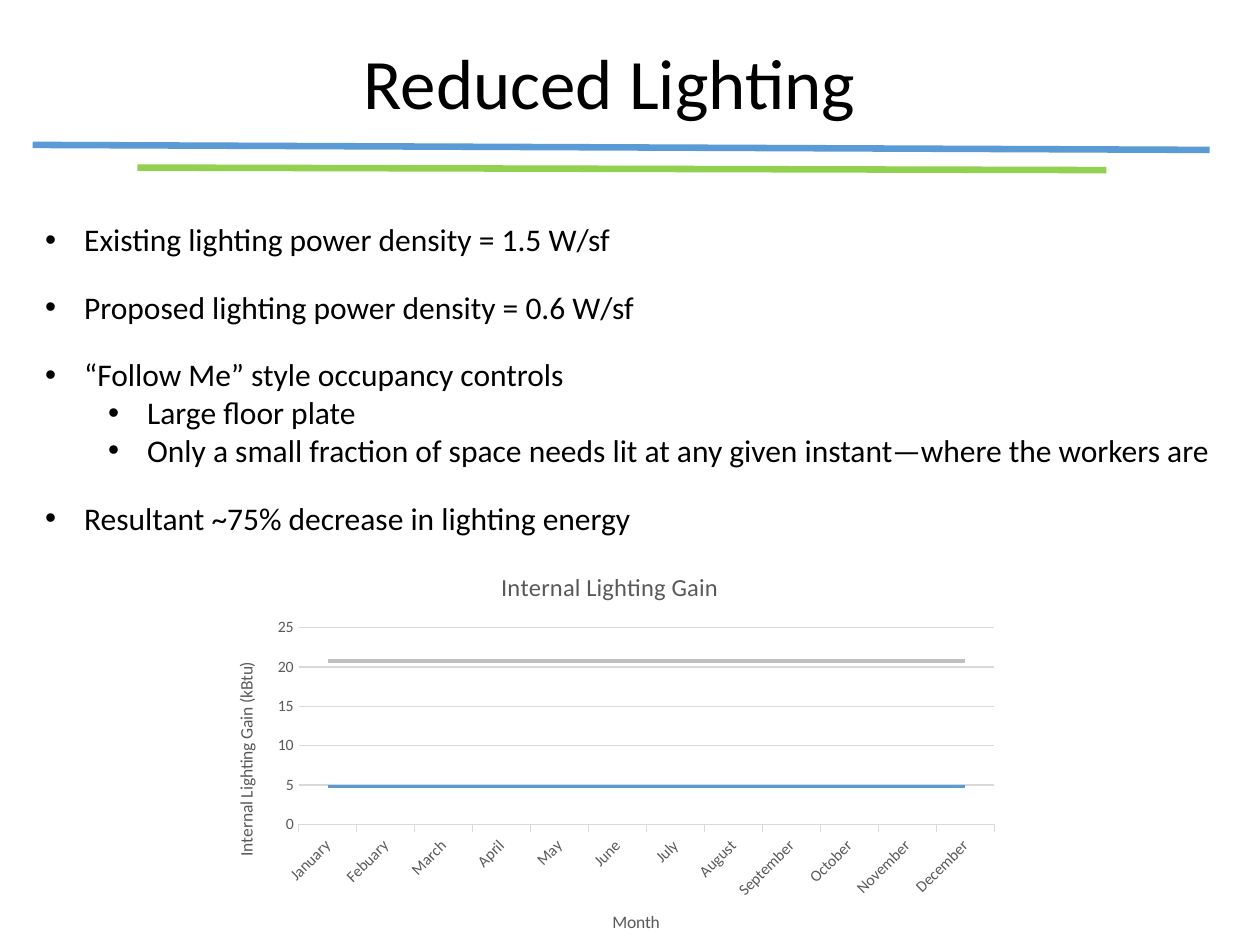
"""Build the Reduced Lighting slide with its bullets and monthly gain chart."""
from lxml.etree import SubElement
from pptx import Presentation
from pptx.chart.data import CategoryChartData
from pptx.dml.color import RGBColor
from pptx.enum.chart import XL_CHART_TYPE as ChartType, XL_TICK_LABEL_POSITION as LabelPosition
from pptx.enum.chart import XL_TICK_MARK as TickMark
from pptx.enum.shapes import MSO_CONNECTOR as Connector
from pptx.enum.text import MSO_ANCHOR as Anchor, PP_ALIGN as Align
from pptx.oxml.ns import qn
from pptx.util import Inches, Pt

BLACK = RGBColor(0x00, 0x00, 0x00)
BLUE = RGBColor(0x5B, 0x9B, 0xD5)
GREEN = RGBColor(0x92, 0xD0, 0x50)
SILVER = RGBColor(0xBF, 0xBF, 0xBF)
GRID = RGBColor(0xD9, 0xD9, 0xD9)
GRAY = RGBColor(0x59, 0x59, 0x59)


def style_font(font, size, color):
    font.name = "Calibri"
    font.size = Pt(size)
    font.bold = False
    font.color.rgb = color


def set_title(owner, text, size):
    text_frame = owner.text_frame
    text_frame.text = text
    style_font(text_frame.paragraphs[0].runs[0].font, size, GRAY)


presentation = Presentation()
presentation.slide_width = Inches(10)
presentation.slide_height = Inches(7.5)
slide = presentation.slides.add_slide(presentation.slide_layouts[6])

title_box = slide.shapes.add_textbox(Inches(1.33), Inches(0.02), Inches(7.02), Inches(1.02))
title_frame = title_box.text_frame
title_frame.word_wrap = True
title_frame.vertical_anchor = Anchor.BOTTOM
title_frame.text = "Reduced Lighting"
title = title_frame.paragraphs[0]
title.alignment = Align.CENTER
title.line_spacing = 0.9
style_font(title.runs[0].font, 40.5, BLACK)

for x1, y1, x2, y2, color in [(0.26, 1.15, 9.6, 1.19, BLUE), (1.09, 1.33, 8.78, 1.35, GREEN)]:
    rule = slide.shapes.add_connector(
        Connector.STRAIGHT, Inches(x1), Inches(y1), Inches(x2), Inches(y2))
    rule.line.color.rgb = color
    rule.line.width = Pt(3.75)
    SubElement(rule._element.spPr, qn("a:effectLst"))

bullets = [
    (0, "Existing lighting power density = 1.5 W/sf"),
    (0, "Proposed lighting power density = 0.6 W/sf"),
    (0, "“Follow Me” style occupancy controls"),
    (1, "Large floor plate"),
    (1, "Only a small fraction of space needs lit at any given instant—where the workers are"),
    (0, "Resultant ~75% decrease in lighting energy"),
]
bullet_box = slide.shapes.add_textbox(Inches(0.26), Inches(1.7), Inches(9.56), Inches(3))
bullet_frame = bullet_box.text_frame
bullet_frame.word_wrap = True
bullet_frame.text = "\n".join(text for level, text in bullets)
for index, (paragraph, (level, text)) in enumerate(zip(bullet_frame.paragraphs, bullets)):
    paragraph.level = level
    paragraph.space_before = Pt(17 if index and level == 0 else 0)
    style_font(paragraph.runs[0].font, 18, BLACK)
    properties = paragraph._p.get_or_add_pPr()
    properties.set("marL", str(Inches(0.31 + 0.5 * level)))
    properties.set("indent", str(Inches(-0.31)))
    SubElement(properties, qn("a:buFont"), typeface="Arial")
    SubElement(properties, qn("a:buChar"), char="•")

months = ["January", "Febuary", "March", "April", "May", "June", "July",
          "August", "September", "October", "November", "December"]
chart_data = CategoryChartData()
chart_data.categories = months
for name, gain in [("Series 1", 4.8), ("Series 2", 20.8)]:
    chart_data.add_series(name, [gain] * len(months))
chart = slide.shapes.add_chart(
    ChartType.LINE, Inches(1.66), Inches(4.37), Inches(6.36), Inches(3.24), chart_data).chart
style_font(chart.font, 10, BLACK)
chart.has_legend = False
set_title(chart.chart_title, "Internal Lighting Gain", 14)
chart.chart_title.include_in_layout = False

plot = chart.plots[0]
plot.vary_by_categories = False
for series, color in zip(plot.series, [BLUE, SILVER]):
    series.smooth = False
    series.format.line.color.rgb = color
    series.format.line.width = Pt(2.25)

month_axis, gain_axis = chart.category_axis, chart.value_axis
for axis, text in [(month_axis, "Month"), (gain_axis, "Internal Lighting Gain (kBtu)")]:
    set_title(axis.axis_title, text, 10)
    style_font(axis.tick_labels.font, 9, GRAY)
    axis.minor_tick_mark = TickMark.NONE
month_axis.major_tick_mark = TickMark.OUTSIDE
month_axis.tick_label_position = LabelPosition.LOW
month_axis.format.line.color.rgb = GRID
month_axis.format.line.width = Pt(0.75)
gain_axis.major_tick_mark = TickMark.NONE
gain_axis.minimum_scale = 0
gain_axis.maximum_scale = 25
gain_axis.major_unit = 5
gain_axis.format.line.fill.background()
gain_axis.major_gridlines.format.line.color.rgb = GRID
gain_axis.major_gridlines.format.line.width = Pt(0.75)

presentation.save("out.pptx")
